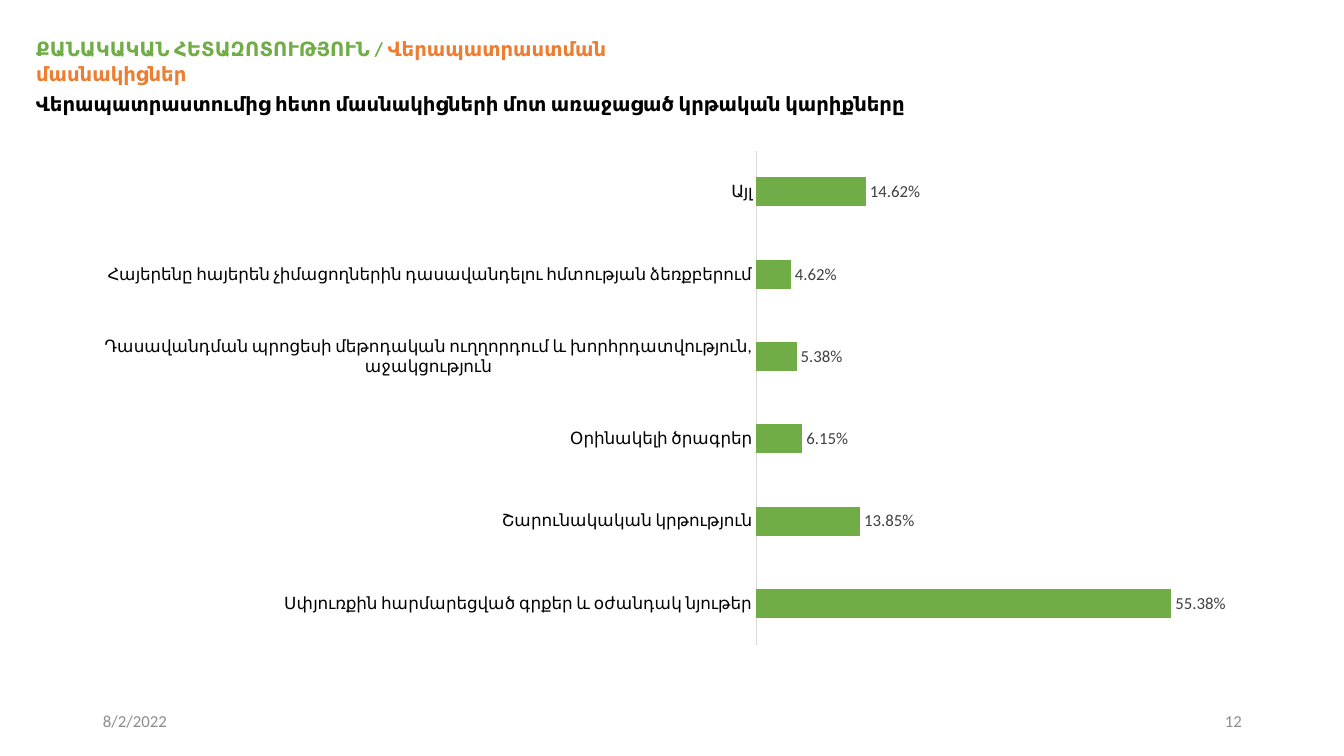
from lxml.etree import SubElement
from pptx import Presentation
from pptx.chart.data import CategoryChartData
from pptx.dml.color import RGBColor
from pptx.enum.chart import XL_CHART_TYPE, XL_LABEL_POSITION, XL_TICK_MARK
from pptx.enum.text import MSO_ANCHOR, MSO_AUTO_SIZE, PP_ALIGN
from pptx.oxml.ns import qn
from pptx.util import Emu, Pt

COLORS = {"green": "70AD47", "orange": "ED7D31", "black": "000000",
          "label": "404040", "footer": "8C8C8C", "axis": "D9D9D9"}
FONT = "Calibri"
EMU_PER_PX = 914400 / 100.8

NEEDS = [
    ("Սփյուռքին հարմարեցված գրքեր և օժանդակ նյութեր", 0.5538),
    ("Շարունակական կրթություն", 0.1385),
    ("Օրինակելի ծրագրեր", 0.0615),
    ("Դասավանդման պրոցեսի մեթոդական ուղղորդում և խորհրդատվություն, աջակցություն", 0.0538),
    ("Հայերենը հայերեն չիմացողներին դասավանդելու հմտության ձեռքբերում", 0.0462),
    ("Այլ", 0.1462),
]


def px(length):
    """Turn pixels into EMU."""
    return Emu(round(length * EMU_PER_PX))


def rgb(name):
    """Look up a colour by name."""
    return RGBColor.from_string(COLORS[name])


def format_font(font, size, color, bold=False):
    """Apply typeface, size, colour and weight to a font."""
    font.name, font.size, font.bold = FONT, Pt(size), bold
    font.color.rgb = rgb(color)


def write_text(shape, runs, size=14, bold=False, align=PP_ALIGN.LEFT,
               anchor=MSO_ANCHOR.TOP, line_spacing=1.0, space_after=0):
    """Write one paragraph of (text, colour) runs into a shape."""
    frame = shape.text_frame
    frame.word_wrap = True
    frame.auto_size = MSO_AUTO_SIZE.NONE
    frame.vertical_anchor = anchor
    paragraph = frame.paragraphs[0]
    paragraph.alignment = align
    paragraph.line_spacing = line_spacing
    paragraph.space_before, paragraph.space_after = Pt(0), Pt(space_after)
    for text, color in runs:
        run = paragraph.add_run()
        run.text = text
        format_font(run.font, size, color, bold)


def add_heading(slide, left, top, width, height):
    """Fill the title and put the subtitle below it."""
    title = slide.shapes.title
    title.left, title.top = px(left), px(top)
    title.width, title.height = px(width), px(height)
    write_text(title, [("ՔԱՆԱԿԱԿԱՆ ՀԵՏԱԶՈՏՈՒԹՅՈՒՆ / ", "green"),
                       ("Վերապատրաստման մասնակիցներ", "orange")],
               bold=True, line_spacing=1.07, space_after=8)
    subtitle = slide.shapes.add_textbox(px(left), px(top + 55), px(985), px(height))
    write_text(subtitle, [("Վերապատրաստումից հետո մասնակիցների մոտ առաջացած կրթական կարիքները", "black")],
               bold=True, align=PP_ALIGN.JUSTIFY, line_spacing=1.07, space_after=6)


def set_plot_layout(chart, **fractions):
    """Fix the inner plot area as fractions of the chart."""
    plot_area = chart._chartSpace.chart.plotArea
    layout = plot_area.find(qn("c:layout"))
    if layout is None:
        layout = SubElement(plot_area, qn("c:layout"))
        plot_area.insert(0, layout)
    manual = SubElement(layout, qn("c:manualLayout"))
    settings = {"layoutTarget": "inner", "xMode": "edge", "yMode": "edge", **fractions}
    for tag, value in settings.items():
        SubElement(manual, qn(f"c:{tag}")).set("val", str(value))


def add_needs_chart(slide, left, top, width, height):
    """Draw the bar chart of educational needs."""
    data = CategoryChartData(number_format="0.00%")
    data.categories = [name for name, share in NEEDS]
    data.add_series("Series 1", [share for name, share in NEEDS])
    chart = slide.shapes.add_chart(XL_CHART_TYPE.BAR_CLUSTERED, px(left), px(top),
                                   px(width), px(height), data).chart
    chart.has_legend = chart.has_title = False
    format_font(chart.font, 10, "black")
    set_plot_layout(chart, x=0.588, y=0.021, w=0.392, h=0.959)

    category_axis = chart.category_axis
    category_axis.major_tick_mark = category_axis.minor_tick_mark = XL_TICK_MARK.NONE
    category_axis.format.line.color.rgb = rgb("axis")
    category_axis.format.line.width = Pt(0.75)
    format_font(category_axis.tick_labels.font, 12, "black")
    value_axis = chart.value_axis
    value_axis.has_major_gridlines = value_axis.visible = False
    value_axis.minimum_scale, value_axis.maximum_scale = 0, 0.6

    plot = chart.plots[0]
    plot.gap_width, plot.vary_by_categories = 182, False
    series = plot.series[0]
    series.format.fill.solid()
    series.format.fill.fore_color.rgb = rgb("green")
    labels = series.data_labels
    labels.show_value = True
    labels.number_format, labels.number_format_is_linked = "0.00%", False
    labels.position = XL_LABEL_POSITION.OUTSIDE_END
    format_font(labels.font, 12, "label")


def add_footer(slide, left, top, width, height):
    """Put the date at the left end and the page number at the right end."""
    box_width = 302
    for text, box_left, align in (("8/2/2022", left, PP_ALIGN.LEFT),
                                  ("12", left + width - box_width, PP_ALIGN.RIGHT)):
        box = slide.shapes.add_textbox(px(box_left), px(top), px(box_width), px(height))
        write_text(box, [(text, "footer")], size=12, align=align, anchor=MSO_ANCHOR.MIDDLE)


def main():
    """Build and save the slide."""
    presentation = Presentation()
    presentation.slide_width, presentation.slide_height = px(1344), px(756)
    slide = presentation.slides.add_slide(presentation.slide_layouts[5])
    add_heading(slide, 26, 30, 742, 35)
    add_needs_chart(slide, 82, 140, 1147, 515)
    add_footer(slide, 93, 701, 1159, 40)
    presentation.save("out.pptx")


if __name__ == "__main__":
    main()
